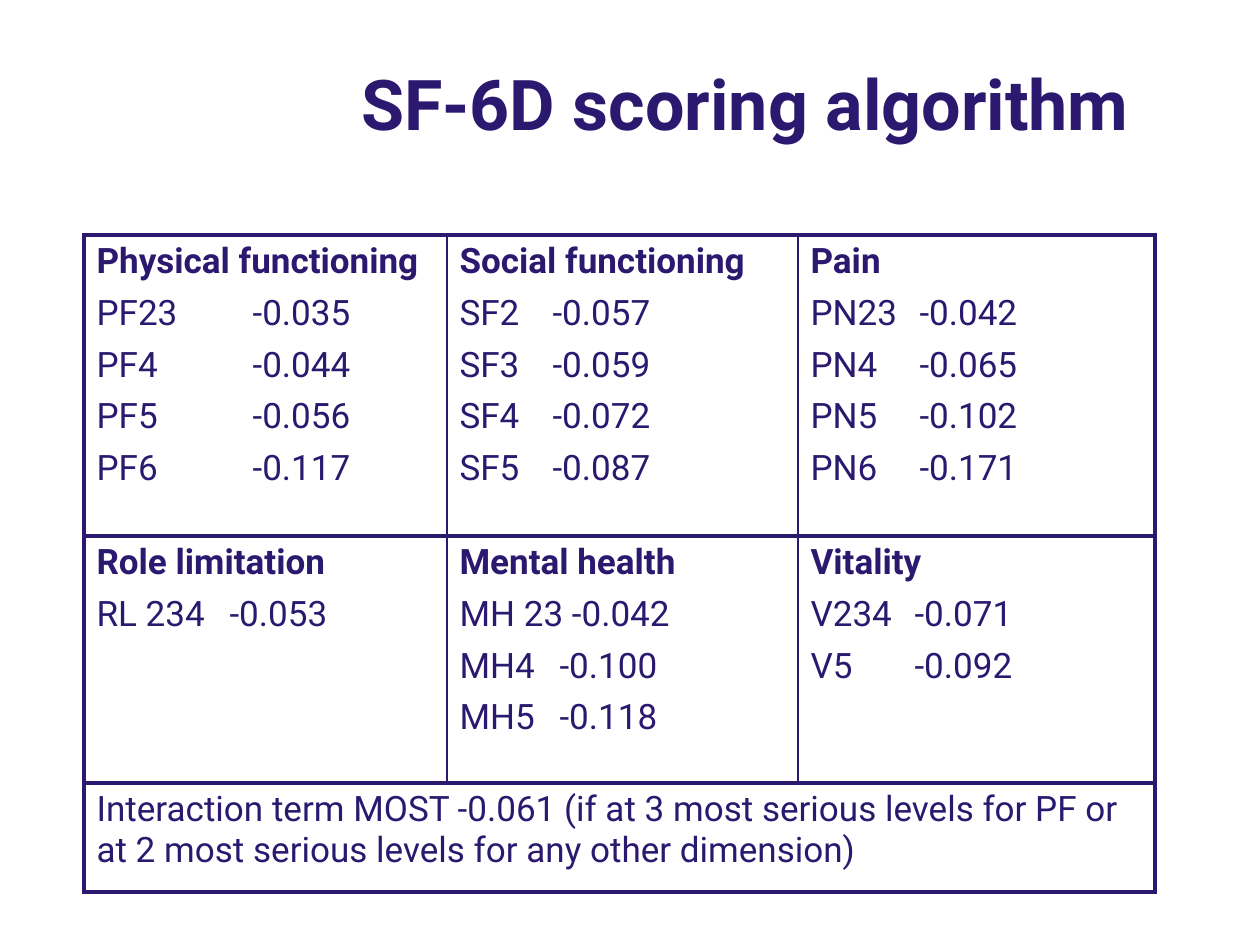
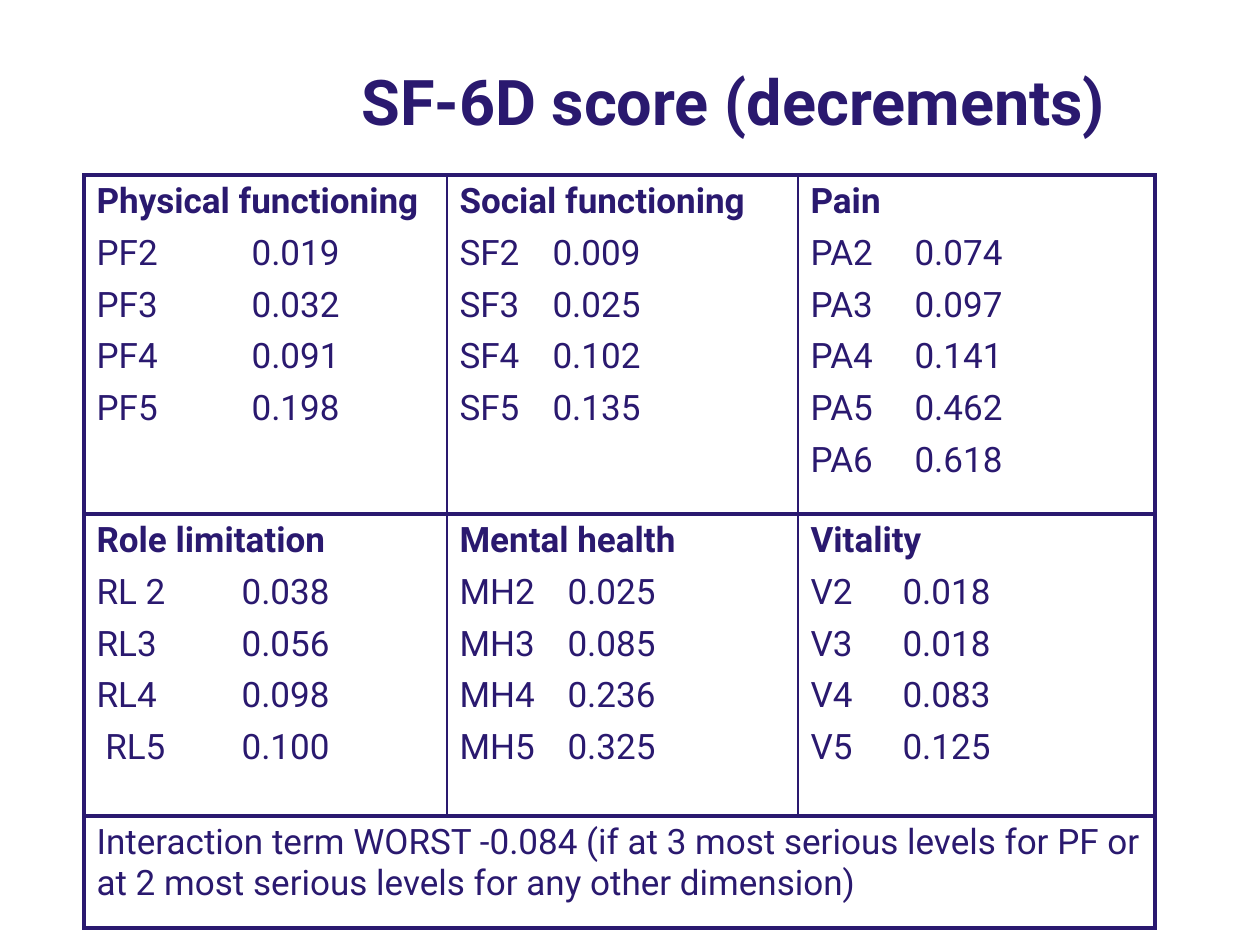
"""Build two slides with SF-6D scoring tables."""
from dataclasses import dataclass
from typing import Any

from lxml.etree import SubElement
from pptx import Presentation
from pptx.dml.color import RGBColor
from pptx.enum.text import MSO_ANCHOR
from pptx.oxml.ns import qn
from pptx.util import Emu, Pt

INK = "2A196F"
FONT = "Roboto"
PX_PER_INCH = 126
SLIDE_SIZE = (1260, 945)
TITLE_BOX = (349, 63, 898, 92)
TITLE_FORMAT = {"word_wrap": True, "vertical_anchor": MSO_ANCHOR.TOP}
TABLE_LEFT = 84
COLUMN_WIDTHS = (363, 351, 357)
BODY_SIZE = 20
THICK, THIN = 2.25, 1


@dataclass(frozen=True)
class Dimension:
    heading: str
    value_tab: int
    levels: tuple[tuple[str, ...], ...]


@dataclass(frozen=True)
class ScoreSlide:
    title: str
    title_size: int
    table_top: int
    row_heights: tuple[int, ...]
    dimensions: tuple[Dimension, ...]
    interaction: str


SCORE_SLIDES = (
    ScoreSlide(
        "SF-6D scoring algorithm", 40, 235, (301, 247, 109),
        (
            Dimension("Physical functioning", 156, (
                ("PF23", "-0.035"), ("PF4", "-0.044"), ("PF5", "-0.056"), ("PF6", "-0.117"))),
            Dimension("Social functioning", 93, (
                ("SF2", "-0.057"), ("SF3", "-0.059"), ("SF4", "-0.072"), ("SF5", "-0.087"))),
            Dimension("Pain", 109, (
                ("PN23", "-0.042"), ("PN4", "-0.065"), ("PN5", "-0.102"), ("PN6", "-0.171"))),
            Dimension("Role limitation", 133, (("RL 234", "-0.053"),)),
            Dimension("Mental health", 100, (
                ("MH 23 -0.042",), ("MH4", "-0.100"), ("MH5", "-0.118"))),
            Dimension("Vitality", 104, (("V234", "-0.071"), ("V5", "-0.092"))),
        ),
        "Interaction term MOST -0.061 (if at 3 most serious levels for PF or "
        "at 2 most serious levels for any other dimension)",
    ),
    ScoreSlide(
        "SF-6D score (decrements)", 36, 175, (339, 302, 112),
        (
            Dimension("Physical functioning", 155, (
                ("PF2", "0.019"), ("PF3", "0.032"), ("PF4", "0.091"), ("PF5", "0.198"))),
            Dimension("Social functioning", 93, (
                ("SF2", "0.009"), ("SF3", "0.025"), ("SF4", "0.102"), ("SF5", "0.135"))),
            Dimension("Pain", 104, (
                ("PA2", "0.074"), ("PA3", "0.097"), ("PA4", "0.141"), ("PA5", "0.462"),
                ("PA6", "0.618"))),
            Dimension("Role limitation", 145, (
                ("RL 2", "0.038"), ("RL3", "0.056"), ("RL4", "0.098"), (" RL5", "0.100"))),
            Dimension("Mental health", 108, (
                ("MH2", "0.025"), ("MH3", "0.085"), ("MH4", "0.236"), ("MH5", "0.325"))),
            Dimension("Vitality", 92, (
                ("V2", "0.018"), ("V3", "0.018"), ("V4", "0.083"), ("V5", "0.125"))),
        ),
        "Interaction term WORST -0.084 (if at 3 most serious levels for PF or "
        "at 2 most serious levels for any other dimension)",
    ),
)


def px(length: int) -> Emu:
    return Emu(round(length * 914400 / PX_PER_INCH))


def color(hex_code: str) -> RGBColor:
    return RGBColor.from_string(hex_code)


def apply_format(target: Any, values: dict[str, Any]) -> None:
    for attribute, value in values.items():
        setattr(target, attribute, value)


def write(paragraph: Any, text: str, size: int, bold: bool) -> None:
    run = paragraph.add_run()
    run.text = text
    apply_format(run.font, {"name": FONT, "size": Pt(size), "bold": bold})
    run.font.color.rgb = color(INK)


def add_tab_stop(paragraph: Any, position: int) -> None:
    stops = SubElement(paragraph._p.get_or_add_pPr(), qn("a:tabLst"))
    SubElement(stops, qn("a:tab"), pos=str(px(position)), algn="l")


def draw_borders(cell: Any, left: float, right: float) -> None:
    properties = cell._tc.get_or_add_tcPr()
    widths = {"a:lnL": left, "a:lnR": right, "a:lnT": THICK, "a:lnB": THICK}
    for side, width in widths.items():
        line = SubElement(properties, qn(side), w=str(Pt(width)))
        fill = SubElement(line, qn("a:solidFill"))
        SubElement(fill, qn("a:srgbClr"), val=INK)


def fill_dimension(cell: Any, dimension: Dimension) -> None:
    frame = cell.text_frame
    write(frame.paragraphs[0], dimension.heading, BODY_SIZE, True)
    for level in dimension.levels:
        paragraph = frame.add_paragraph()
        add_tab_stop(paragraph, dimension.value_tab)
        paragraph.space_before = Pt(6)
        write(paragraph, "\t".join(level), BODY_SIZE, False)


def draw_title(slide: Any, title: str, size: int) -> None:
    frame = slide.shapes.add_textbox(*map(px, TITLE_BOX)).text_frame
    apply_format(frame, TITLE_FORMAT | {"margin_top": px(12)})
    heading = frame.paragraphs[0]
    heading.line_spacing = 0.83
    write(heading, title, size, True)


def draw_score_table(slide: Any, content: ScoreSlide) -> None:
    columns, rows = len(COLUMN_WIDTHS), len(content.row_heights)
    bounds = (TABLE_LEFT, content.table_top, sum(COLUMN_WIDTHS), sum(content.row_heights))
    scores = slide.shapes.add_table(rows, columns, *map(px, bounds)).table
    apply_format(scores, {"first_row": False, "horz_banding": False})
    for column, width in zip(scores.columns, COLUMN_WIDTHS):
        column.width = px(width)
    for row, height in zip(scores.rows, content.row_heights):
        row.height = px(height)

    for index, dimension in enumerate(content.dimensions):
        row_index, column_index = divmod(index, columns)
        cell = scores.cell(row_index, column_index)
        fill_dimension(cell, dimension)
        draw_borders(
            cell,
            THICK if column_index == 0 else THIN,
            THICK if column_index == columns - 1 else THIN,
        )

    interaction = scores.cell(rows - 1, 0)
    interaction.merge(scores.cell(rows - 1, columns - 1))
    write(interaction.text_frame.paragraphs[0], content.interaction, BODY_SIZE, False)
    draw_borders(interaction, THICK, THICK)
    for cell in scores.iter_cells():
        cell.fill.background()


def main() -> None:
    deck = Presentation()
    width, height = SLIDE_SIZE
    apply_format(deck, {"slide_width": px(width), "slide_height": px(height)})
    for content in SCORE_SLIDES:
        slide = deck.slides.add_slide(deck.slide_layouts[6])
        draw_title(slide, content.title, content.title_size)
        draw_score_table(slide, content)
    deck.save("out.pptx")


if __name__ == "__main__":
    main()
